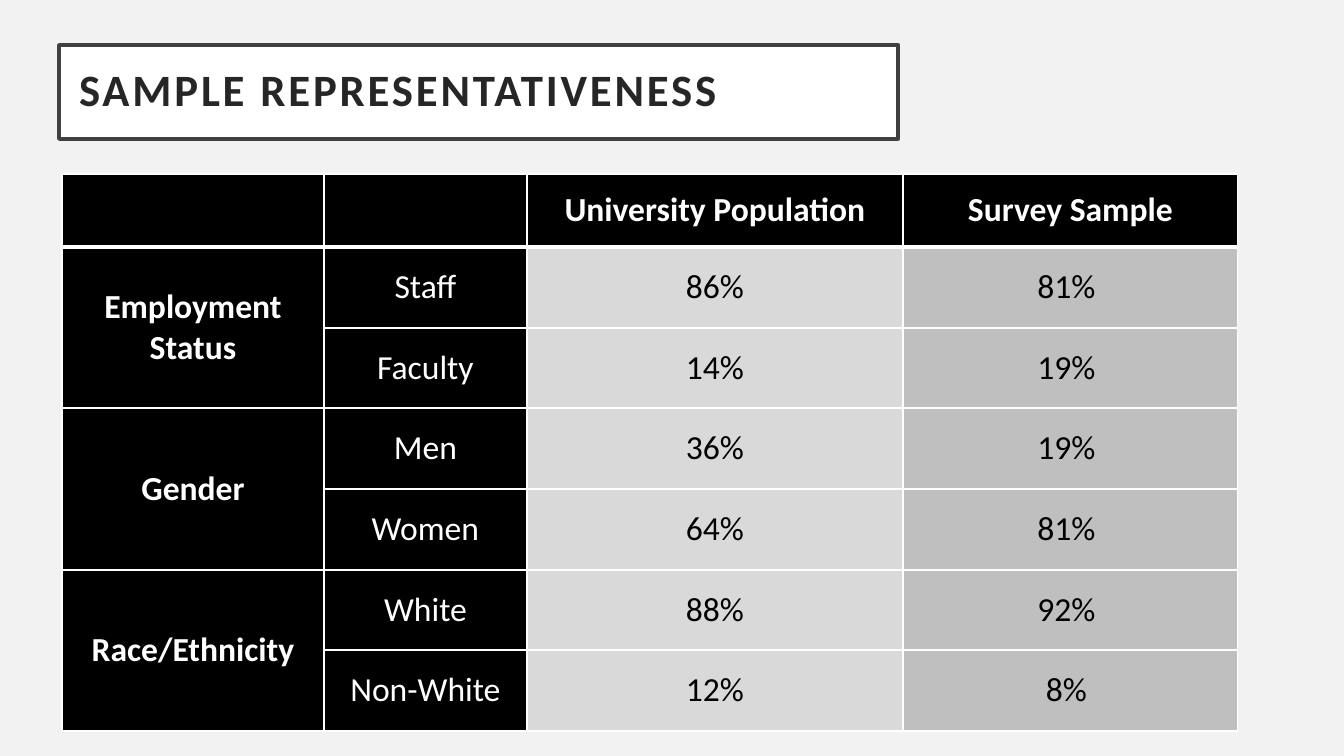
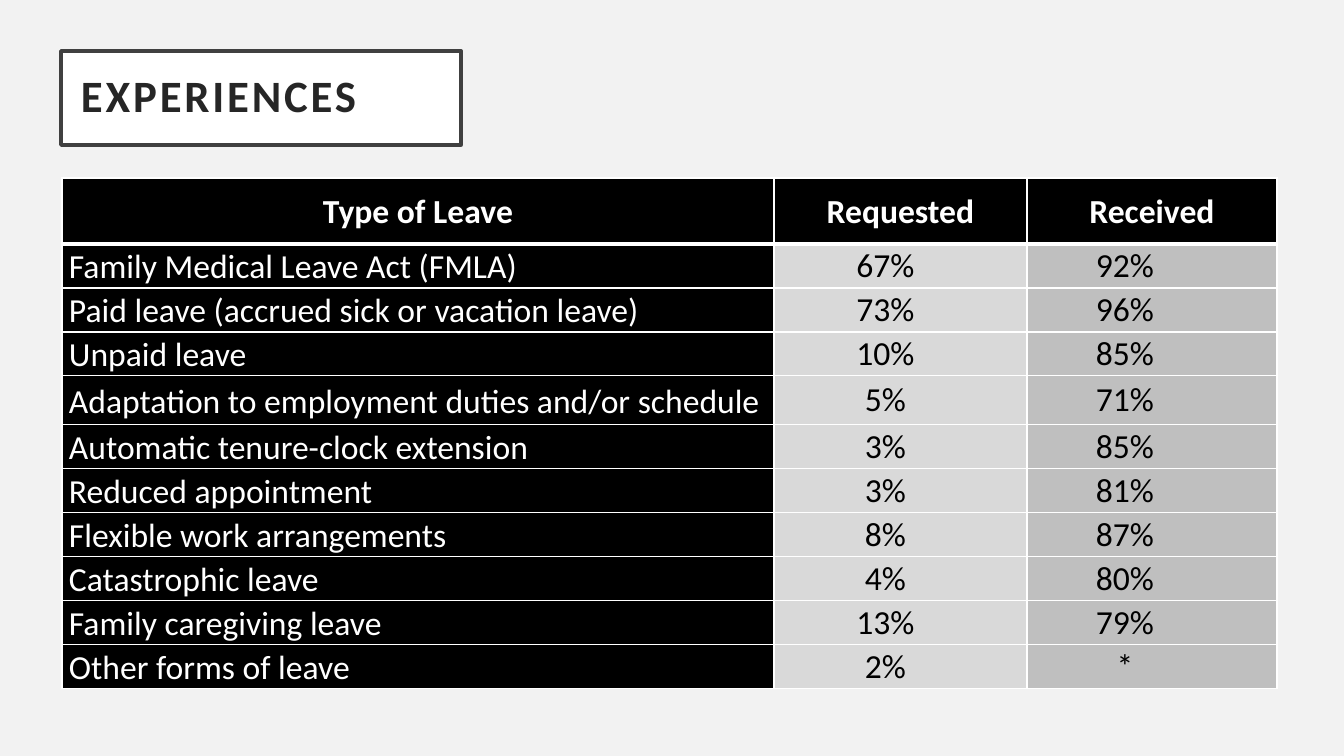
from dataclasses import dataclass

from lxml.etree import SubElement
from pptx import Presentation
from pptx.dml.color import RGBColor
from pptx.enum.shapes import MSO_SHAPE as Shape
from pptx.enum.text import MSO_ANCHOR as Anchor, PP_ALIGN as Align
from pptx.oxml.ns import qn
from pptx.util import Pt

EMU_PER_INCH = 914400
PX_PER_INCH = 100.8
COLORS = {
    "background": "F2F2F2",
    "title": "262626",
    "frame": "404040",
    "white": "FFFFFF",
    "black": "000000",
    "light": "D9D9D9",
    "medium": "BFBFBF",
}


def px(length):
    return round(length * EMU_PER_INCH / PX_PER_INCH)


def color(name):
    return RGBColor.from_string(COLORS[name])


@dataclass
class Column:
    width: int
    fill: str
    font: str
    bold: bool = False
    align: Align = Align.CENTER
    left: int = 6
    right: int = 6
    spacing: float = 1.0


class Deck:
    font = "Calibri"
    body_size = 24
    title_size = 32
    title_tracking = 200
    title_height = 94
    inset = 20
    header_rule = 3
    rule = 1

    def __init__(self):
        self.presentation = Presentation()
        self.presentation.slide_width = px(1344)
        self.presentation.slide_height = px(756)
        self.slide = None

    def add_slide(self):
        layout = self.presentation.slide_layouts[6]
        self.slide = self.presentation.slides.add_slide(layout)
        fill = self.slide.background.fill
        fill.solid()
        fill.fore_color.rgb = color("background")

    def add_text(self, frame, text, size, font_color, bold, align, spacing):
        paragraph = frame.paragraphs[0]
        paragraph.alignment = align
        paragraph.line_spacing = spacing
        run = paragraph.add_run()
        run.text = text
        run.font.name = self.font
        run.font.size = Pt(size)
        run.font.bold = bold
        run.font.color.rgb = color(font_color)
        return run

    def title(self, text, left, top, width):
        shape = self.slide.shapes.add_shape(
            Shape.RECTANGLE, px(left), px(top), px(width), px(self.title_height))
        shape.shadow.inherit = False
        shape.fill.solid()
        shape.fill.fore_color.rgb = color("white")
        shape.line.color.rgb = color("frame")
        shape.line.width = Pt(2.5)
        frame = shape.text_frame
        frame.word_wrap = True
        frame.vertical_anchor = Anchor.MIDDLE
        frame.margin_left = frame.margin_right = px(self.inset)
        frame.margin_top = frame.margin_bottom = px(self.inset)
        run = self.add_text(frame, text, self.title_size, "title", True, Align.LEFT, 0.9)
        run.font._element.set("spc", str(self.title_tracking))

    def borders(self, cell, top, bottom):
        properties = cell._tc.get_or_add_tcPr()
        widths = {"lnL": self.rule, "lnR": self.rule, "lnT": top, "lnB": bottom}
        for tag, width in widths.items():
            line = SubElement(properties, qn(f"a:{tag}"), w=str(int(Pt(width))))
            fill = SubElement(line, qn("a:solidFill"))
            SubElement(fill, qn("a:srgbClr"), val=COLORS["white"])

    def cell(self, cell, text, style, top, bottom):
        self.borders(cell, top, bottom)
        cell.fill.solid()
        cell.fill.fore_color.rgb = color(style.fill)
        cell.vertical_anchor = Anchor.MIDDLE
        cell.margin_left = px(style.left)
        cell.margin_right = px(style.right)
        cell.margin_top = cell.margin_bottom = 0
        if text:
            self.add_text(cell.text_frame, text, self.body_size, style.font,
                          style.bold, style.align, style.spacing)

    def table(self, left, top, columns, heights, rows, header_spacing=1.0):
        width = sum(column.width for column in columns)
        table = self.slide.shapes.add_table(
            len(rows), len(columns), px(left), px(top), px(width), px(sum(heights))).table
        table.horz_banding = False
        for index, column in enumerate(columns):
            table.columns[index].width = px(column.width)
        for row_index, (height, row) in enumerate(zip(heights, rows)):
            table.rows[row_index].height = px(height)
            upper = self.header_rule if row_index == 1 else self.rule
            lower = self.header_rule if row_index == 0 else self.rule
            for column_index, (column, text) in enumerate(zip(columns, row)):
                style = column
                if row_index == 0:
                    style = Column(column.width, "black", "white", True,
                                   spacing=header_spacing)
                self.cell(table.cell(row_index, column_index), text, style, upper, lower)
        return table


def sample_slide(deck):
    deck.add_slide()
    columns = [
        Column(262, "black", "white", bold=True),
        Column(203, "black", "white"),
        Column(376, "light", "black"),
        Column(335, "medium", "black", right=14),
    ]
    rows = [
        ("", "", "University Population", "Survey Sample"),
        ("Employment Status", "Staff", "86%", "81%"),
        ("", "Faculty", "14%", "19%"),
        ("Gender", "Men", "36%", "19%"),
        ("", "Women", "64%", "81%"),
        ("Race/Ethnicity", "White", "88%", "92%"),
        ("", "Non-White", "12%", "8%"),
    ]
    table = deck.table(62, 174, columns, [73] + [81, 80, 81] * 2, rows)
    for first in range(1, len(rows), 2):
        table.cell(first, 0).merge(table.cell(first + 1, 0))
    deck.title("SAMPLE REPRESENTATIVENESS", 59, 45, 839)


def experiences_slide(deck):
    deck.add_slide()
    deck.title("EXPERIENCES", 61, 51, 400)
    columns = [
        Column(712, "black", "white", align=Align.LEFT, left=7, right=7, spacing=1.07),
        Column(253, "light", "black", left=26, right=56),
        Column(250, "medium", "black", left=7, right=61),
    ]
    rows = [
        ("Type of Leave", "Requested", "Received"),
        ("Family Medical Leave Act (FMLA)", "67%", "92%"),
        ("Paid leave (accrued sick or vacation leave)", "73%", "96%"),
        ("Unpaid leave", "10%", "85%"),
        ("Adaptation to employment duties and/or schedule", "5%", "71%"),
        ("Automatic tenure-clock extension", "3%", "85%"),
        ("Reduced appointment", "3%", "81%"),
        ("Flexible work arrangements", "8%", "87%"),
        ("Catastrophic leave", "4%", "80%"),
        ("Family caregiving leave", "13%", "79%"),
        ("Other forms of leave", "2%", "*"),
    ]
    heights = [66] + [44] * 3 + [49] + [44] * 6
    deck.table(62, 178, columns, heights, rows, header_spacing=1.07)


def main():
    deck = Deck()
    sample_slide(deck)
    experiences_slide(deck)
    deck.presentation.save("out.pptx")


if __name__ == "__main__":
    main()
